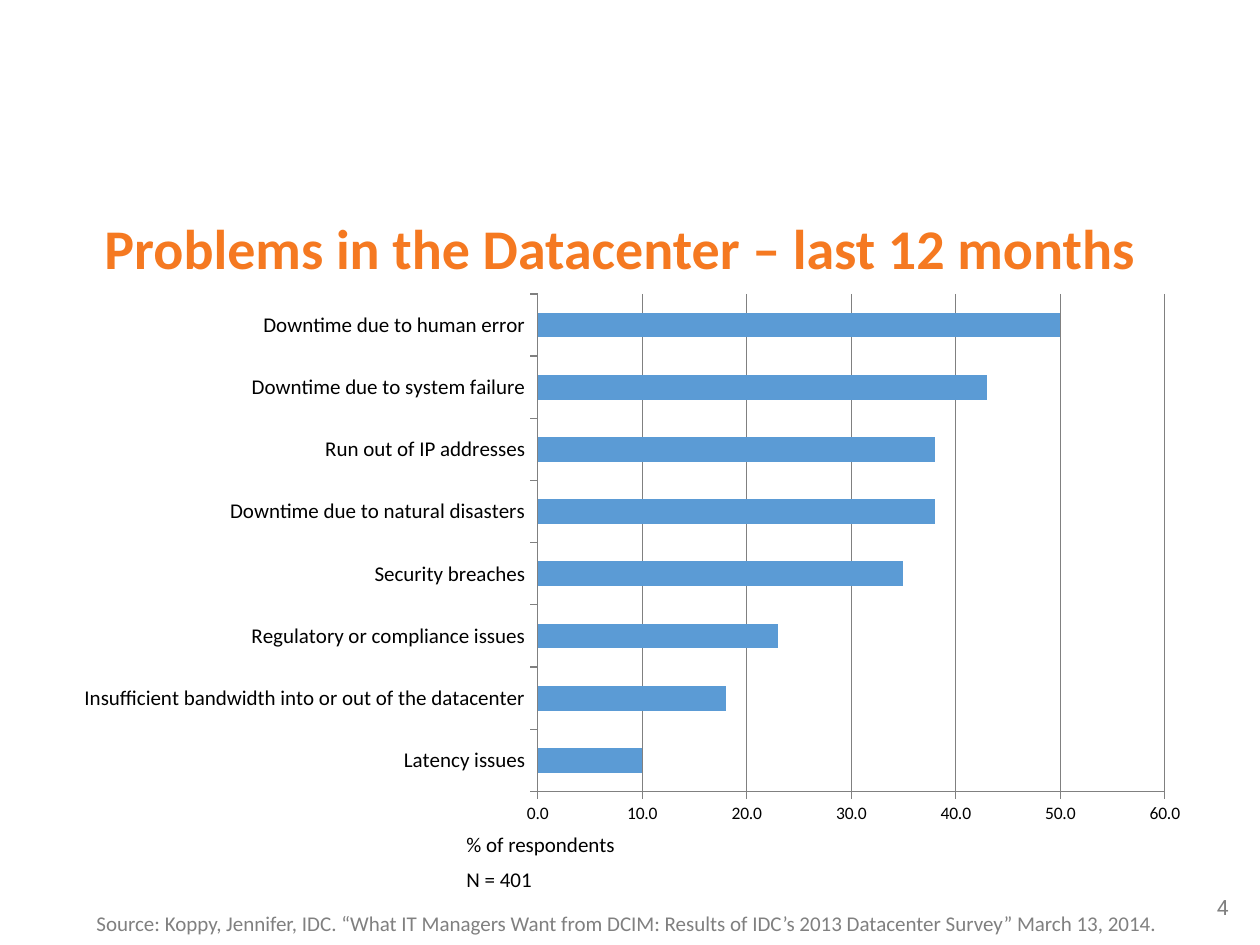
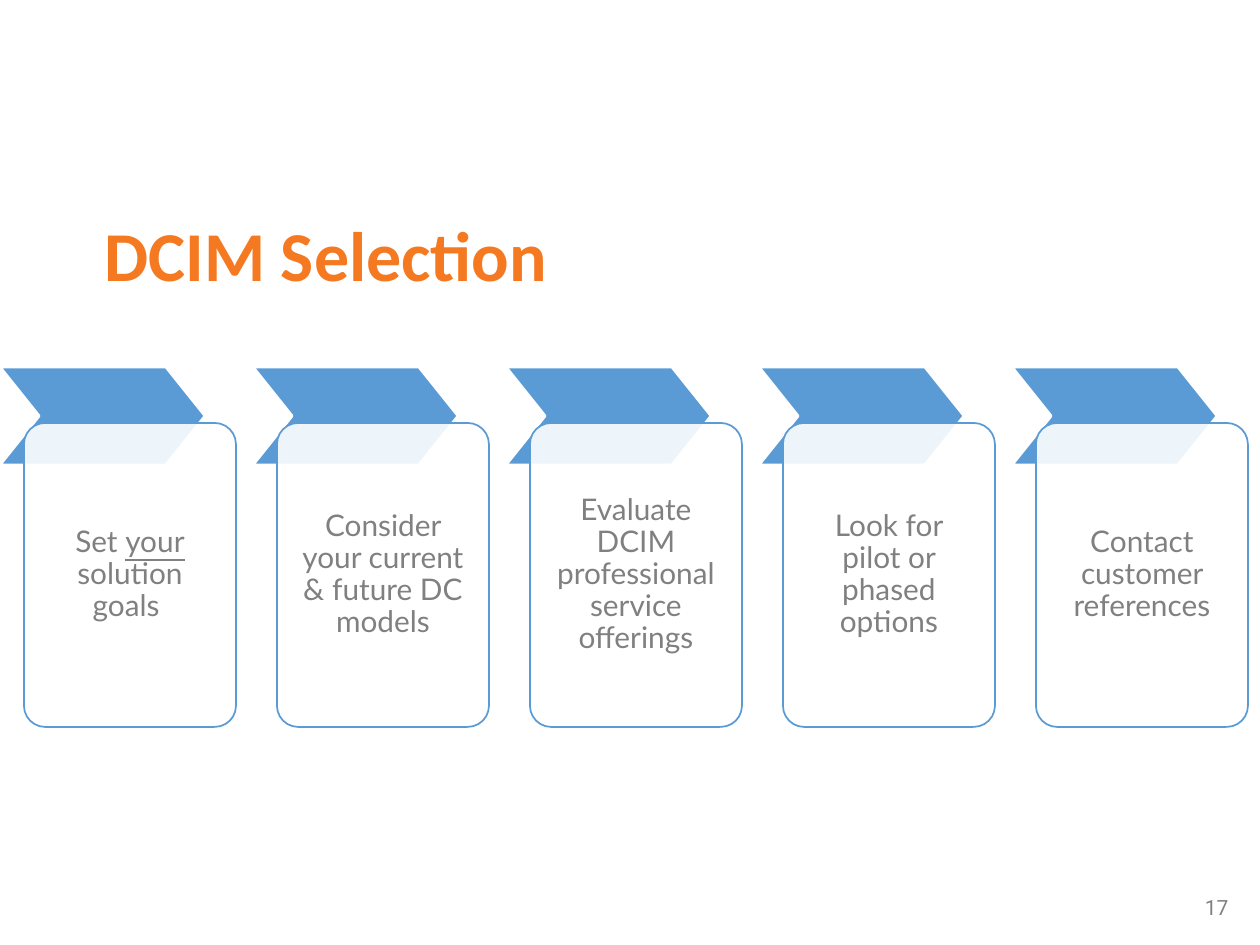
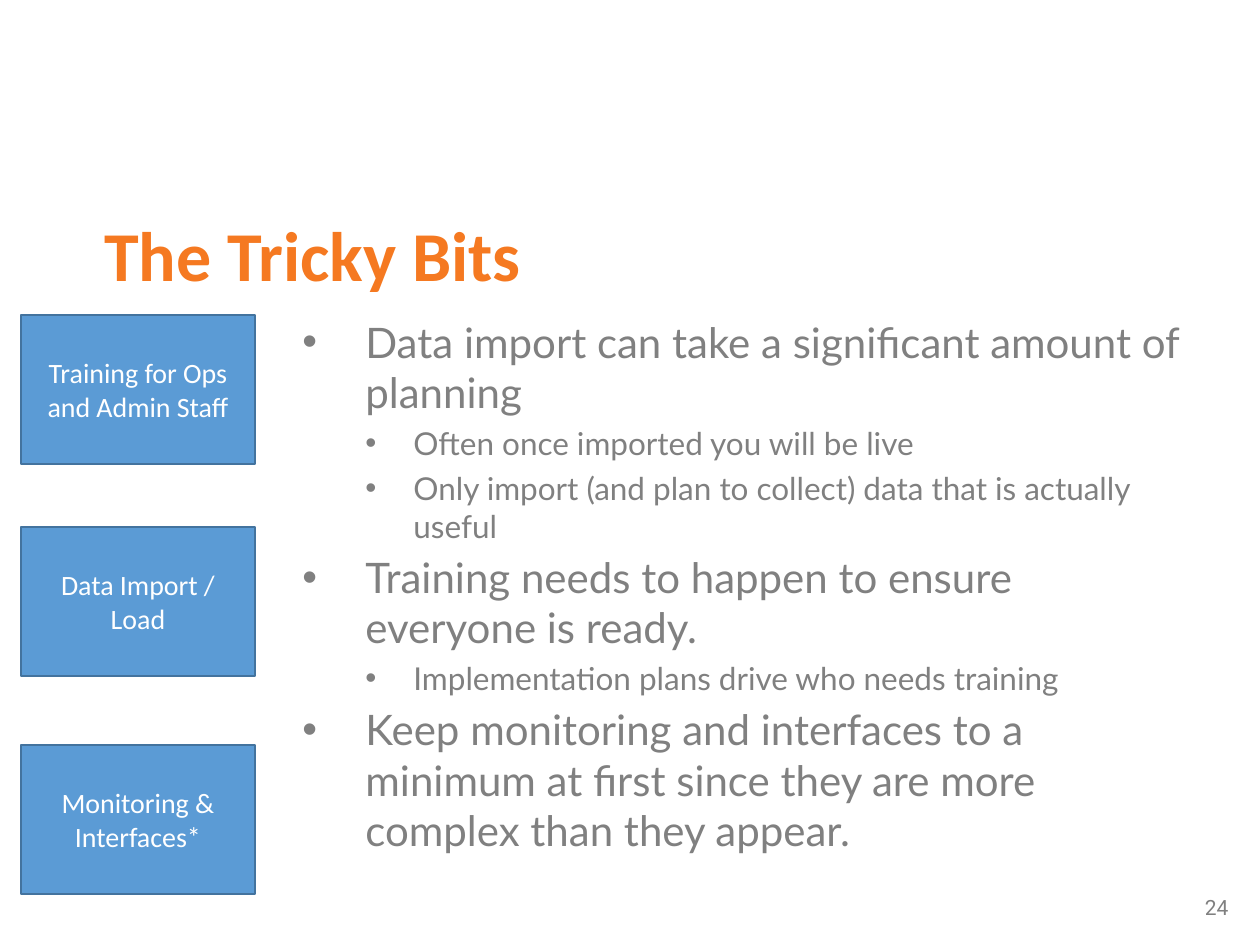
from lxml.etree import SubElement
from pptx import Presentation
from pptx.chart.data import CategoryChartData
from pptx.dml.color import RGBColor
from pptx.enum.chart import XL_CHART_TYPE as Chart, XL_TICK_MARK as Tick
from pptx.enum.shapes import MSO_SHAPE as Shape
from pptx.enum.text import MSO_ANCHOR as Anchor, PP_ALIGN as Align
from pptx.oxml.ns import qn
from pptx.util import Emu, Pt

ORANGE, BLUE, NAVY = "F57921", "5B9BD5", "43739E"
GREY, BLACK, WHITE = "808080", "000000", "FFFFFF"
HEADING, BODY, NUMBER = "Calibri", "Lato", "Roboto"

PROBLEMS = [
    ("Latency issues", 10),
    ("Insufficient bandwidth into or out of the datacenter", 18),
    ("Regulatory or compliance issues", 23),
    ("Security breaches", 35),
    ("Downtime due to natural disasters", 38),
    ("Run out of IP addresses", 38),
    ("Downtime due to system failure", 43),
    ("Downtime due to human error", 50),
]
SELECTION_STEPS = [
    ["Set ", "_your", " solution goals "],
    ["Consider your current & future DC models"],
    ["Evaluate DCIM professional service offerings"],
    ["Look for pilot or phased options"],
    ["Contact customer references"],
]
TRICKY_AREAS = [
    (315, "Training for Ops and Admin Staff"),
    (527, "Data Import / Load"),
    (745, "Monitoring & Interfaces*"),
]
TRICKY_POINTS = [
    (0, "Data import can take a significant amount of planning"),
    (1, "Often once imported you will be live"),
    (1, "Only import (and plan to collect) data that is actually useful"),
    (0, "Training needs to happen to ensure everyone is ready."),
    (1, "Implementation plans drive who needs training"),
    (0, "Keep monitoring and interfaces to a minimum at first since they "
        "are more complex than they appear."),
]


def px(length):
    return Emu(round(length * 914400 / 126))


def color(value):
    return RGBColor.from_string(value)


class Deck:
    def __init__(self):
        self.deck = Presentation()
        self.deck.slide_width, self.deck.slide_height = px(1260), px(945)

    def new_slide(self, title, number, title_size=40):
        self.slide = self.deck.slides.add_slide(self.deck.slide_layouts[6])
        self.text((1116, 888, 125, 38), [number], 12, NUMBER, GREY, Align.RIGHT)
        heading = self.text((92, 215, 1086, 95), [title], title_size, HEADING, ORANGE)[0]
        heading.font.bold = True
        heading.line_spacing = 0.9

    def style(self, paragraph, size, font, hue, align=Align.LEFT):
        paragraph.alignment = align
        paragraph.font.size = Pt(size)
        paragraph.font.name = font
        paragraph.font.color.rgb = color(hue)

    def text(self, box, lines, size, font, hue, align=Align.LEFT, anchor=Anchor.TOP):
        frame = self.slide.shapes.add_textbox(*map(px, box)).text_frame
        frame.word_wrap = True
        frame.vertical_anchor = anchor
        frame.text = "\n".join(lines)
        for paragraph in frame.paragraphs:
            self.style(paragraph, size, font, hue, align)
        return frame.paragraphs

    def bullets(self, box, points):
        frame = self.slide.shapes.add_textbox(*map(px, box)).text_frame
        frame.word_wrap = True
        frame.text = "\n".join(words for _, words in points)
        for paragraph, (level, _) in zip(frame.paragraphs, points):
            left, hang, size = ((63, 63, 24), (111, 48, 18))[level]
            paragraph.level = level
            paragraph.space_after = Pt(4)
            properties = paragraph._p.get_or_add_pPr()
            properties.set("marL", str(px(left)))
            properties.set("indent", str(-px(hang)))
            SubElement(properties, qn("a:buFont"), typeface="Arial")
            SubElement(properties, qn("a:buChar"), char="•")
            self.style(paragraph, size, BODY, GREY)

    def shape(self, kind, box, fill, line, width, adjust=None, opacity=None):
        shape = self.slide.shapes.add_shape(kind, *map(px, box))
        shape.shadow.inherit = False
        shape.fill.solid()
        shape.fill.fore_color.rgb = color(fill)
        shape.line.color.rgb = color(line)
        shape.line.width = Pt(width)
        if adjust is not None:
            shape.adjustments[0] = adjust
        if opacity is not None:
            tint = shape._element.spPr.find(qn("a:solidFill")).find(qn("a:srgbClr"))
            SubElement(tint, qn("a:alpha"), val=str(opacity * 1000))
        return shape

    def label(self, shape, parts, size, font, hue, inset=None, spacing=None):
        frame = shape.text_frame
        frame.word_wrap = True
        frame.vertical_anchor = Anchor.MIDDLE
        if inset is not None:
            frame.margin_left = frame.margin_right = px(inset)
            frame.margin_top = frame.margin_bottom = px(inset)
        paragraph = frame.paragraphs[0]
        for part in parts:
            run = paragraph.add_run()
            run.text = part.lstrip("_")
            if part.startswith("_"):
                run.font.underline = True
        if spacing is not None:
            paragraph.line_spacing = spacing
        self.style(paragraph, size, font, hue, Align.CENTER)

    def bar_chart(self, box, rows, plot_area):
        data = CategoryChartData(number_format="###0.0")
        data.categories = [name for name, _ in rows]
        data.add_series("Series 1", [value for _, value in rows])
        chart = self.slide.shapes.add_chart(
            Chart.BAR_CLUSTERED, *map(px, box), data).chart
        chart.has_legend = chart.has_title = False
        chart.font.name, chart.font.size = HEADING, Pt(10)
        chart.font.color.rgb = color(BLACK)
        plot = chart.plots[0]
        plot.gap_width = 150
        plot.vary_by_categories = False
        bars = plot.series[0].format.fill
        bars.solid()
        bars.fore_color.rgb = color(BLUE)
        problems, share = chart.category_axis, chart.value_axis
        for axis in (problems, share):
            axis.major_tick_mark, axis.minor_tick_mark = Tick.OUTSIDE, Tick.NONE
            axis.format.line.color.rgb = color(GREY)
            axis.format.line.width = Pt(0.75)
        problems.tick_labels.font.size = Pt(12)
        share.minimum_scale, share.maximum_scale, share.major_unit = 0, 60, 10
        share.tick_labels.number_format = "###0.0"
        share.tick_labels.number_format_is_linked = False
        share.has_major_gridlines = True
        share.major_gridlines.format.line.color.rgb = color(GREY)
        share.major_gridlines.format.line.width = Pt(0.75)
        self.place_plot(chart, plot_area)

    def place_plot(self, chart, plot_area):
        area = chart._chartSpace.find(".//" + qn("c:plotArea"))
        for automatic in area.findall(qn("c:layout")):
            area.remove(automatic)
        layout = SubElement(area, qn("c:layout"))
        area.insert(0, layout)
        manual = SubElement(layout, qn("c:manualLayout"))
        settings = [("layoutTarget", "inner"), ("xMode", "edge"), ("yMode", "edge")]
        for tag, value in settings + list(zip("xywh", plot_area)):
            SubElement(manual, qn("c:" + tag), val=str(value))


def problems_slide(deck):
    deck.new_slide("Problems in the Datacenter – last 12 months", "4", 32)
    deck.bar_chart((57, 266, 1134, 561), PROBLEMS, (0.424, 0.05, 0.553, 0.887))
    sample = deck.text((454, 825, 251, 74), ["% of respondents", "N = 401"],
                       12, HEADING, BLACK)
    for note in sample:
        note.space_after = Pt(6)
    deck.text((68, 892, 1118, 50),
              ["Source: Koppy, Jennifer, IDC. “What IT Managers Want from DCIM: "
               "Results of IDC’s 2013 Datacenter Survey” March 13, 2014."],
              12, HEADING, GREY, Align.CENTER, Anchor.BOTTOM)


def selection_slide(deck):
    deck.new_slide("DCIM Selection", "17")
    for index, step in enumerate(SELECTION_STEPS):
        left = index * 253
        deck.shape(Shape.CHEVRON, (left, 367, 205, 98), BLUE, WHITE, 1.5, adjust=0.4)
        card = deck.shape(Shape.ROUNDED_RECTANGLE, (left + 24, 423, 212, 304),
                          WHITE, BLUE, 1, adjust=0.1, opacity=90)
        deck.label(card, step, 17, BODY, GREY, inset=16, spacing=0.9)


def tricky_slide(deck):
    deck.new_slide("The Tricky Bits", "24")
    deck.bullets((290, 310, 912, 585), TRICKY_POINTS)
    for top, area in TRICKY_AREAS:
        box = deck.shape(Shape.FLOWCHART_PROCESS, (21, top, 234, 149), BLUE, NAVY, 1)
        deck.label(box, [area], 16, HEADING, WHITE)


def main():
    deck = Deck()
    problems_slide(deck)
    selection_slide(deck)
    tricky_slide(deck)
    deck.deck.save("out.pptx")


if __name__ == "__main__":
    main()
